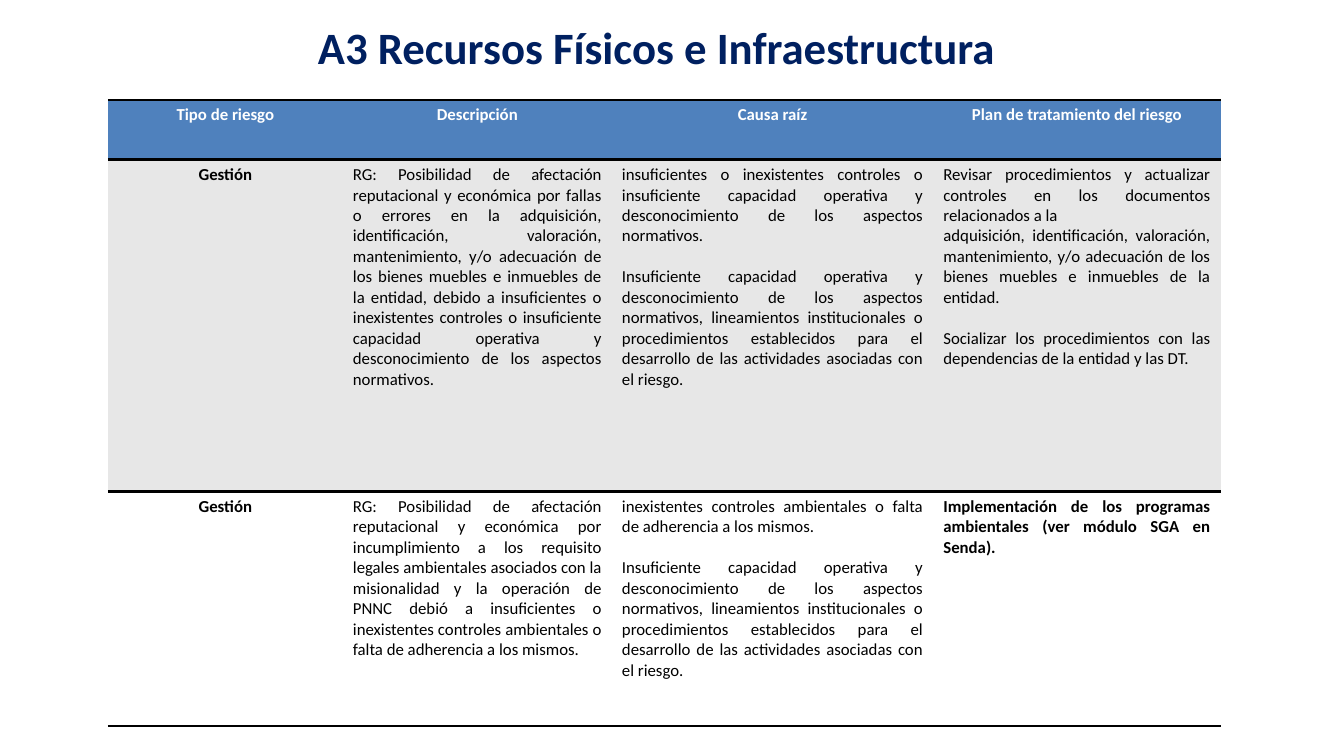
from dataclasses import dataclass

from lxml.etree import SubElement
from pptx import Presentation
from pptx.dml.color import RGBColor as Rgb
from pptx.enum.text import MSO_ANCHOR as Anchor, PP_ALIGN as Align
from pptx.oxml import parse_xml
from pptx.oxml.ns import nsdecls, qn
from pptx.slide import Slide
from pptx.table import Table, _Cell as TCell
from pptx.util import Cm, Pt


@dataclass(frozen=True)
class Theme:
    font: str = "Calibri"
    navy: str = "002060"
    blue: str = "4F81BD"
    gray: str = "E7E7E7"
    white: str = "FFFFFF"
    black: str = "000000"
    title: float = 32
    body: float = 12
    gap: float = 14.65  # one blank line of body text
    rule: float = 2


@dataclass(frozen=True)
class Para:
    text: str
    gap: float = 0


@dataclass(frozen=True)
class Entry:
    paras: tuple[Para, ...]
    bold: bool = False
    align: Align = Align.JUSTIFY


@dataclass(frozen=True)
class Band:
    height: float
    fill: str
    ink: str
    edges: tuple[str, ...]
    cells: tuple[Entry, ...]


THEME = Theme()
COLS = (5.92, 6.78, 8.1, 7.24)
PLAIN = "{2D5ABB26-0587-4C30-8999-92F81FD0307C}"  # no style, no grid


def label(text: str) -> Entry:
    return Entry((Para(text),), True, Align.CENTER)


# Table content
HEADS = ("Tipo de riesgo", "Descripción", "Causa raíz", "Plan de tratamiento del riesgo")
KIND = label("Gestión")
LACK = Para(
    "Insuficiente capacidad operativa y desconocimiento de los aspectos normativos, "
    "lineamientos institucionales o procedimientos establecidos para el desarrollo de "
    "las actividades asociadas con el riesgo.", THEME.gap)

ASSETS = (
    KIND,
    Entry((Para(
        "RG: Posibilidad de afectación reputacional y económica por fallas o errores en la "
        "adquisición, identificación, valoración, mantenimiento, y/o adecuación de los bienes "
        "muebles e inmuebles de la entidad, debido a insuficientes o inexistentes controles o "
        "insuficiente capacidad operativa y desconocimiento de los aspectos normativos."),)),
    Entry((Para(
        "insuficientes o inexistentes controles o insuficiente capacidad operativa y "
        "desconocimiento de los aspectos normativos."), LACK)),
    Entry((
        Para("Revisar procedimientos y actualizar controles en los documentos relacionados a la"),
        Para("adquisición, identificación, valoración, mantenimiento, y/o adecuación de los "
             "bienes muebles e inmuebles de la entidad."),
        Para("Socializar los procedimientos con las dependencias de la entidad y las DT.",
             THEME.gap))),
)

GREEN = (
    KIND,
    Entry((Para(
        "RG: Posibilidad de afectación reputacional y económica por incumplimiento a los "
        "requisito legales ambientales asociados con la misionalidad y la operación de PNNC "
        "debió a insuficientes o inexistentes controles ambientales o falta de adherencia a "
        "los mismos."),)),
    Entry((Para(
        "inexistentes controles ambientales o falta de adherencia a los mismos."), LACK)),
    Entry((Para(
        "Implementación de los programas ambientales (ver módulo SGA en Senda)."),), True),
)

BANDS = (
    Band(1.5, THEME.blue, THEME.white, ("lnT", "lnB"), tuple(map(label, HEADS))),
    Band(8.36, THEME.gray, THEME.black, ("lnT",), ASSETS),
    Band(5.92, THEME.white, THEME.black, ("lnB",), GREEN),
)


def write(para, text: str, size: float, ink: str, bold: bool, align: Align) -> None:
    para.alignment = align
    run = para.add_run()
    run.text = text
    font = run.font
    font.name, font.size, font.bold = THEME.font, Pt(size), bold
    font.color.rgb = Rgb.from_string(ink)


def edge(cell: TCell, tags: tuple[str, ...]) -> None:
    """Draw cell borders; they must precede the fill in the XML."""
    props = cell._tc.get_or_add_tcPr()
    for spot, tag in enumerate(tags):
        line = parse_xml(f'<a:{tag} {nsdecls("a")} w="{Pt(THEME.rule)}"/>')
        fill = SubElement(line, qn("a:solidFill"))
        SubElement(fill, qn("a:srgbClr"), val=THEME.black)
        props.insert(spot, line)


def fill_cell(cell: TCell, entry: Entry, band: Band) -> None:
    cell.fill.solid()
    cell.fill.fore_color.rgb = Rgb.from_string(band.fill)
    edge(cell, band.edges)
    frame = cell.text_frame
    for i, item in enumerate(entry.paras):
        para = frame.add_paragraph() if i else frame.paragraphs[0]
        if item.gap:
            para.space_before = Pt(item.gap)
        write(para, item.text, THEME.body, band.ink, entry.bold, entry.align)


def add_title(slide: Slide, text: str) -> None:
    box = slide.shapes.add_textbox(Cm(4.55), Cm(0.5), Cm(24), Cm(1.38))
    frame = box.text_frame
    frame.word_wrap = True
    frame.vertical_anchor = Anchor.TOP
    frame.margin_left = frame.margin_right = frame.margin_top = frame.margin_bottom = 0
    write(frame.paragraphs[0], text, THEME.title, THEME.navy, True, Align.CENTER)


def add_risks(slide: Slide) -> None:
    tall = sum(band.height for band in BANDS)
    table: Table = slide.shapes.add_table(
        len(BANDS), len(COLS), Cm(2.72), Cm(2.52), Cm(sum(COLS)), Cm(tall)).table
    table.horz_banding = False
    table._tbl.tblPr.find(qn("a:tableStyleId")).text = PLAIN
    for col, width in zip(table.columns, COLS):
        col.width = Cm(width)
    for row, band in zip(table.rows, BANDS):
        row.height = Cm(band.height)
        for cell, entry in zip(row.cells, band.cells):
            fill_cell(cell, entry, band)


def main() -> None:
    deck = Presentation()
    deck.slide_width, deck.slide_height = Cm(33.87), Cm(19.05)
    slide = deck.slides.add_slide(deck.slide_layouts[6])
    # Heading, then the risk table
    add_title(slide, "A3 Recursos Físicos e Infraestructura")
    add_risks(slide)
    deck.save("out.pptx")


if __name__ == "__main__":
    main()
